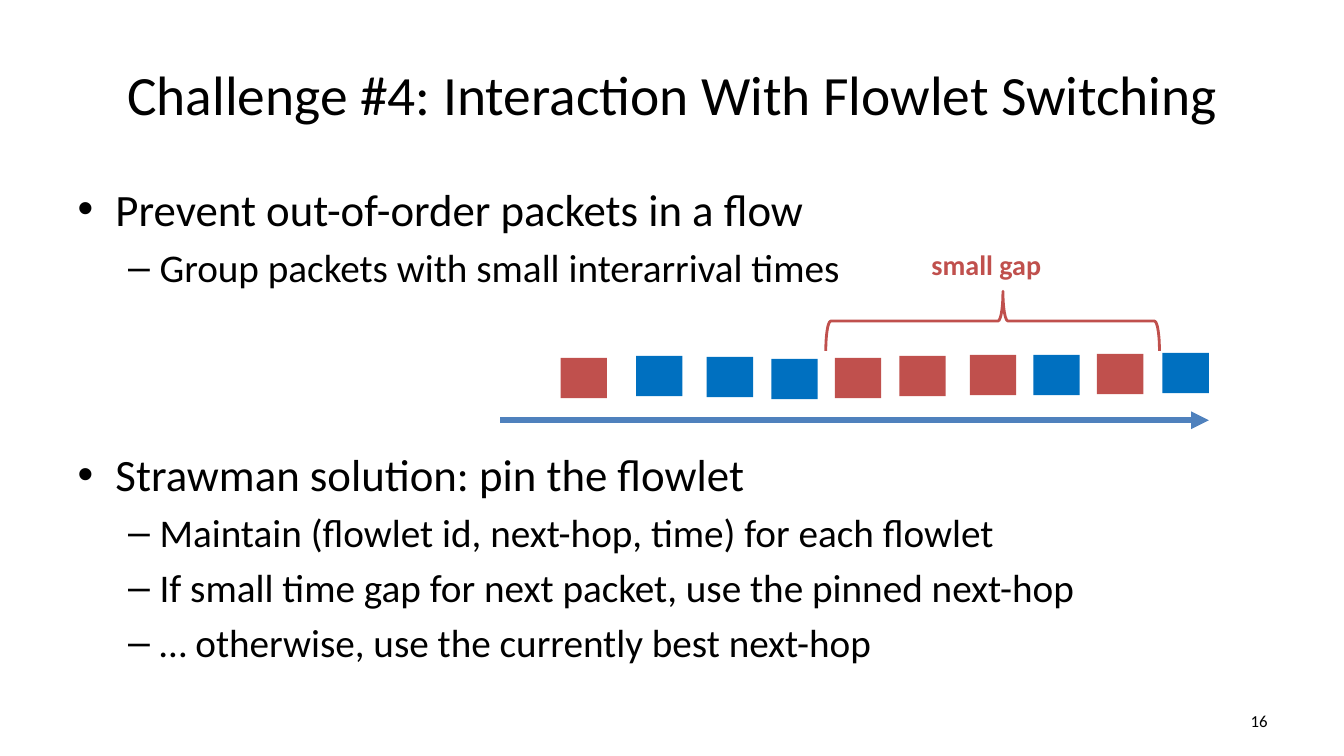
from dataclasses import dataclass

from lxml.etree import SubElement
from pptx import Presentation
from pptx.dml.color import RGBColor
from pptx.enum.shapes import MSO_CONNECTOR, MSO_SHAPE
from pptx.enum.text import MSO_ANCHOR, MSO_AUTO_SIZE, PP_ALIGN
from pptx.oxml.ns import qn
from pptx.shapes.autoshape import Shape
from pptx.slide import Slide
from pptx.text.text import _Paragraph as Paragraph
from pptx.util import Inches, Pt

FONT = "Calibri"
BLACK, RED, BLUE, ARROW_BLUE = "000000", "C0504D", "0070C0", "4F81BD"
PACKET_W, PACKET_H = 0.46, 0.4


@dataclass(frozen=True)
class Bullet:
    text: str
    level: int = 0
    before: float | None = None


@dataclass(frozen=True)
class Packet:
    left: float
    top: float
    color: str


BULLETS = [
    Bullet("Prevent out-of-order packets in a flow"),
    Bullet("Group packets with small interarrival times", 1),
    Bullet("Strawman solution: pin the flowlet", before=112),
    Bullet("Maintain (flowlet id, next-hop, time) for each flowlet", 1),
    Bullet("If small time gap for next packet, use the pinned next-hop", 1),
    Bullet("… otherwise, use the currently best next-hop", 1),
]
PACKETS = [
    Packet(5.56, 3.55, RED),
    Packet(6.31, 3.53, BLUE),
    Packet(7.01, 3.54, BLUE),
    Packet(7.65, 3.56, BLUE),
    Packet(8.28, 3.55, RED),
    Packet(8.92, 3.53, RED),
    Packet(9.62, 3.52, RED),
    Packet(10.25, 3.52, BLUE),
    Packet(10.88, 3.51, RED),
    Packet(11.53, 3.5, BLUE),
]


def rgb(color: str) -> RGBColor:
    return RGBColor.from_string(color)


def place(sp: Shape, left: float, top: float, width: float, height: float) -> None:
    sp.left, sp.top = Inches(left), Inches(top)
    sp.width, sp.height = Inches(width), Inches(height)


def add_run(p: Paragraph, text: str, size: float, color: str = BLACK,
            bold: bool = False) -> None:
    r = p.add_run()
    r.text = text
    r.font.name, r.font.size, r.font.bold = FONT, Pt(size), bold
    r.font.color.rgb = rgb(color)


def add_title(slide: Slide, text: str) -> None:
    sp = slide.shapes.title
    place(sp, 0.67, 0.3, 12, 1.25)
    tf = sp.text_frame
    tf.auto_size = MSO_AUTO_SIZE.NONE
    tf.vertical_anchor = MSO_ANCHOR.MIDDLE
    p = tf.paragraphs[0]
    p.alignment = PP_ALIGN.CENTER
    add_run(p, text, 39.6)


def add_bullets(slide: Slide, bullets: list[Bullet]) -> None:
    sp = slide.placeholders[1]
    place(sp, 0.67, 1.75, 12, 5.45)
    tf = sp.text_frame
    tf.auto_size = MSO_AUTO_SIZE.NONE
    for i, bullet in enumerate(bullets):
        p = tf.add_paragraph() if i else tf.paragraphs[0]
        p.level = bullet.level
        if bullet.before is not None:
            p.space_before = Pt(bullet.before)
        add_run(p, bullet.text, 28 if bullet.level else 32)


def add_packet(slide: Slide, packet: Packet) -> None:
    sp = slide.shapes.add_shape(
        MSO_SHAPE.RECTANGLE, Inches(packet.left), Inches(packet.top),
        Inches(PACKET_W), Inches(PACKET_H))
    sp.shadow.inherit = False
    sp.fill.solid()
    sp.fill.fore_color.rgb = rgb(packet.color)
    sp.line.fill.background()


def add_time_arrow(slide: Slide) -> None:
    arrow = slide.shapes.add_connector(
        MSO_CONNECTOR.STRAIGHT, Inches(4.96), Inches(4.17), Inches(11.99), Inches(4.17))
    arrow.line.color.rgb = rgb(ARROW_BLUE)
    arrow.line.width = Pt(4.25)
    SubElement(arrow.line._get_or_add_ln(), qn("a:tailEnd"), type="triangle")
    SubElement(arrow._element.spPr, qn("a:effectLst"))


def add_gap_brace(slide: Slide) -> None:
    brace = slide.shapes.add_shape(
        MSO_SHAPE.RIGHT_BRACE, Inches(9.55), Inches(1.53), Inches(0.59), Inches(3.31))
    brace.rotation = 270
    brace.adjustments[0], brace.adjustments[1] = 0.083, 0.531
    brace.shadow.inherit = False
    brace.fill.background()
    brace.line.color.rgb = rgb(RED)
    brace.line.width = Pt(2)


def add_gap_label(slide: Slide) -> None:
    sp = slide.shapes.add_textbox(Inches(9.14), Inches(2.41), Inches(1.3), Inches(0.44))
    tf = sp.text_frame
    tf.word_wrap = False
    tf.auto_size = MSO_AUTO_SIZE.SHAPE_TO_FIT_TEXT
    add_run(tf.paragraphs[0], "small gap", 20, RED, bold=True)


def add_page_number(slide: Slide, number: str) -> None:
    sp = slide.shapes.add_textbox(Inches(9.56), Inches(6.95), Inches(3.11), Inches(0.4))
    tf = sp.text_frame
    tf.word_wrap = True
    tf.vertical_anchor = MSO_ANCHOR.MIDDLE
    p = tf.paragraphs[0]
    p.alignment = PP_ALIGN.RIGHT
    add_run(p, number, 12)


def main() -> None:
    prs = Presentation()
    prs.slide_width, prs.slide_height = Inches(13.33), Inches(7.5)
    slide = prs.slides.add_slide(prs.slide_layouts[1])
    add_title(slide, "Challenge #4: Interaction With Flowlet Switching")
    add_bullets(slide, BULLETS)
    add_page_number(slide, "16")
    for packet in PACKETS:
        add_packet(slide, packet)
    add_time_arrow(slide)
    add_gap_brace(slide)
    add_gap_label(slide)
    prs.save("out.pptx")


if __name__ == "__main__":
    main()
